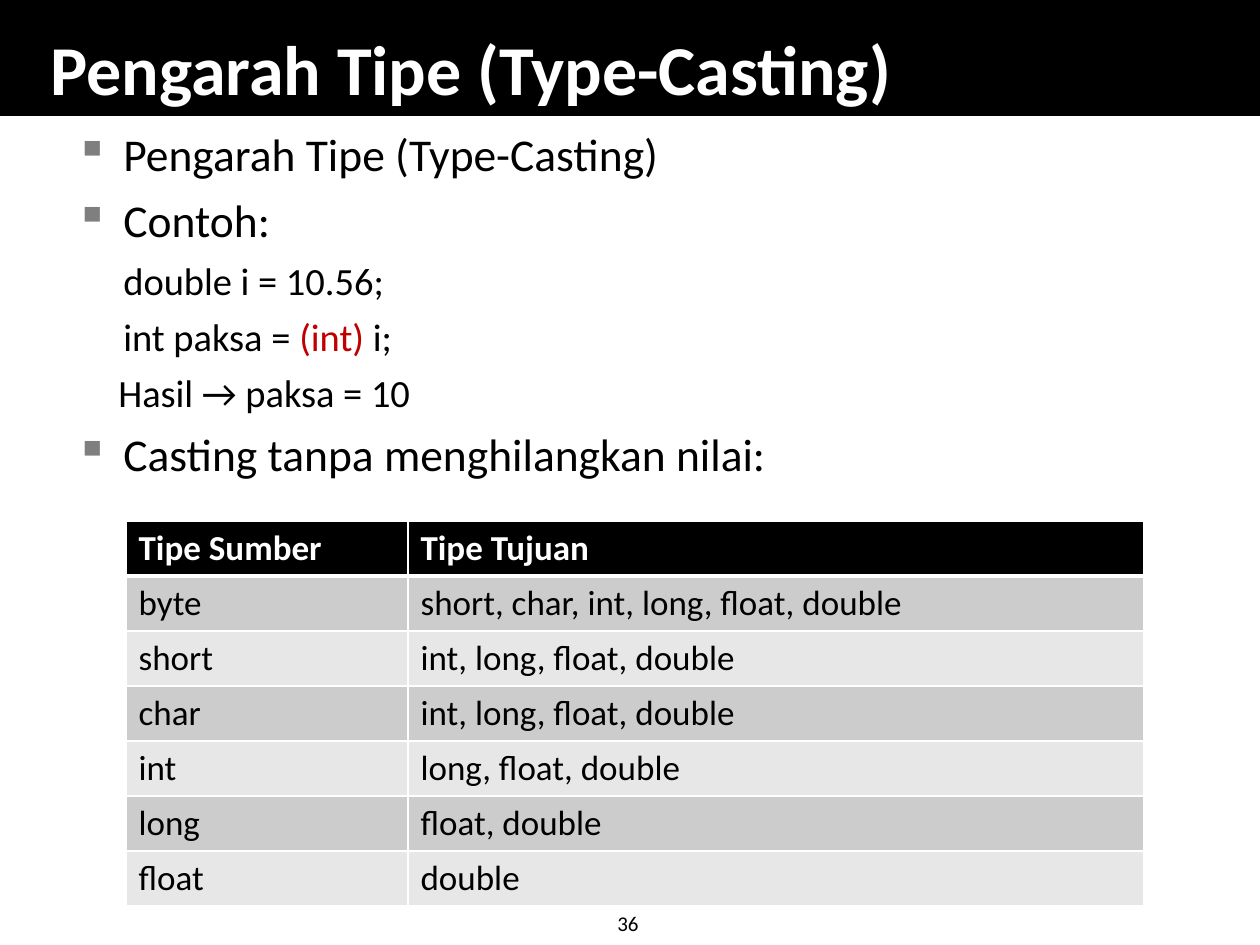
from dataclasses import dataclass
from lxml.etree import SubElement
from pptx import Presentation
from pptx.dml.color import RGBColor
from pptx.enum.shapes import MSO_SHAPE as SHAPE
from pptx.enum.text import MSO_ANCHOR as ANCHOR, MSO_AUTO_SIZE as AUTO, PP_ALIGN as ALIGN
from pptx.oxml.ns import qn
from pptx.util import Pt

PX = 914400 / 126


def px(n):
    return round(n * PX)


@dataclass(frozen=True)
class Theme:
    font: str = "Calibri"
    black: str = "000000"
    white: str = "FFFFFF"
    red: str = "C00000"
    bullet: str = "7F7F7F"
    bands: tuple = ("CCCCCC", "E7E7E7")
    title: int = 40
    item: int = 26
    code: int = 22
    cell: int = 20
    number: int = 12


def apply(obj, **values):
    for name, value in values.items():
        setattr(obj, name, value)


class Deck:
    def __init__(self, theme, width, height):
        self.t = theme
        self.prs = Presentation()
        apply(self.prs, slide_width=px(width), slide_height=px(height))
        self.s = self.prs.slides.add_slide(self.prs.slide_layouts[5])

    def run(self, p, text, size, color, bold=False):
        r = p.add_run()
        r.text = text
        apply(r.font, name=self.t.font, size=Pt(size), bold=bold)
        r.font.color.rgb = RGBColor.from_string(color)

    def bar(self, *box):
        sp = self.s.shapes.add_shape(SHAPE.RECTANGLE, *map(px, box))
        sp.shadow.inherit = False
        sp.fill.solid()
        sp.fill.fore_color.rgb = sp.line.color.rgb = RGBColor.from_string(self.t.black)
        sp.line.width = Pt(1)

    def title(self, text, *box):
        sp = self.s.shapes.title
        self.s.shapes.element.append(sp.element)  # bring in front of the bar
        apply(sp, **dict(zip(("left", "top", "width", "height"), map(px, box))))
        apply(sp.text_frame, vertical_anchor=ANCHOR.BOTTOM, auto_size=AUTO.NONE, word_wrap=True)
        p = sp.text_frame.paragraphs[0]
        p.alignment = ALIGN.LEFT
        self.run(p, text, self.t.title, self.t.white, bold=True)

    def textbox(self, *box, wrap=True):
        tf = self.s.shapes.add_textbox(*map(px, box)).text_frame
        tf.word_wrap = wrap
        return tf

    def number(self, text, *box):
        p = self.textbox(*box, wrap=False).paragraphs[0]
        p.alignment = ALIGN.CENTER
        self.run(p, text, self.t.number, self.t.black)

    def body(self, lines, *box):
        tf = self.textbox(*box)
        for i, (size, margin, bulleted, runs) in enumerate(lines):
            p = tf.add_paragraph() if i else tf.paragraphs[0]
            pPr = p._p.get_or_add_pPr()
            pPr.set("marL", str(px(margin)))
            pPr.set("indent", str(-px(margin) if bulleted else 0))
            if bulleted:
                color = SubElement(pPr, qn("a:buClr"))
                SubElement(color, qn("a:srgbClr"), val=self.t.bullet)
                SubElement(pPr, qn("a:buChar"), char="▪")
            apply(p, line_spacing=0.9, space_after=Pt(round(size * 0.09, 1)),
                  space_before=Pt(round(size * 0.28, 1) if i else 0))
            for text, color in runs:
                self.run(p, text, size, color)

    def borders(self, cell, **widths):
        tcPr = cell._tc.get_or_add_tcPr()
        for side in "LRTB":
            ln = SubElement(tcPr, qn("a:ln" + side), w=str(Pt(widths.get(side, 1))))
            fill = SubElement(ln, qn("a:solidFill"))
            SubElement(fill, qn("a:srgbClr"), val=self.t.white)

    def table(self, rows, left, top, widths, row_height):
        t = self.t
        table = self.s.shapes.add_table(len(rows), len(widths), px(left), px(top),
                                        px(sum(widths)), px(row_height * len(rows))).table
        for col, width in zip(table.columns, widths):
            col.width = px(width)
        for i, row in enumerate(rows):
            head = i == 0
            for j, text in enumerate(row):
                cell = table.cell(i, j)
                self.borders(cell, **({"B": 3} if head else {"T": 3} if i == 1 else {}))
                cell.fill.solid()
                color = t.black if head else t.bands[(i - 1) % 2]
                cell.fill.fore_color.rgb = RGBColor.from_string(color)
                p = cell.text_frame.paragraphs[0]
                p.alignment = ALIGN.LEFT
                self.run(p, text, t.cell, t.white if head else t.black, head)


def main():
    t = Theme()
    deck = Deck(t, 1260, 945)

    # Heading and page number
    deck.bar(0, 0, 1260, 115)
    deck.number("36", 602, 904, 52, 38)
    deck.title("Pengarah Tipe (Type-Casting)", 38, 26, 1180, 90)

    # Bullets and code example
    def item(text):
        return t.item, 48, True, [(text, t.black)]

    def code(*runs, margin=48):
        return t.code, margin, False, runs

    deck.body([
        item("Pengarah Tipe (Type-Casting)"),
        item("Contoh:"),
        code(("double i = 10.56;", t.black)),
        code(("int paksa = ", t.black), ("(int)", t.red), (" i;", t.black)),
        code(("Hasil → paksa = 10", t.black), margin=43),
        item("Casting tanpa menghilangkan nilai:"),
    ], 63, 126, 1134, 388)

    # Lossless casts: each type widens to the ones listed
    deck.table([
        ("Tipe Sumber", "Tipe Tujuan"),
        ("byte", "short, char, int, long, float, double"),
        ("short", "int, long, float, double"),
        ("char", "int, long, float, double"),
        ("int", "long, float, double"),
        ("long", "float, double"),
        ("float", "double"),
    ], 126, 521, (282, 736), 55)

    deck.prs.save("out.pptx")


if __name__ == "__main__":
    main()
